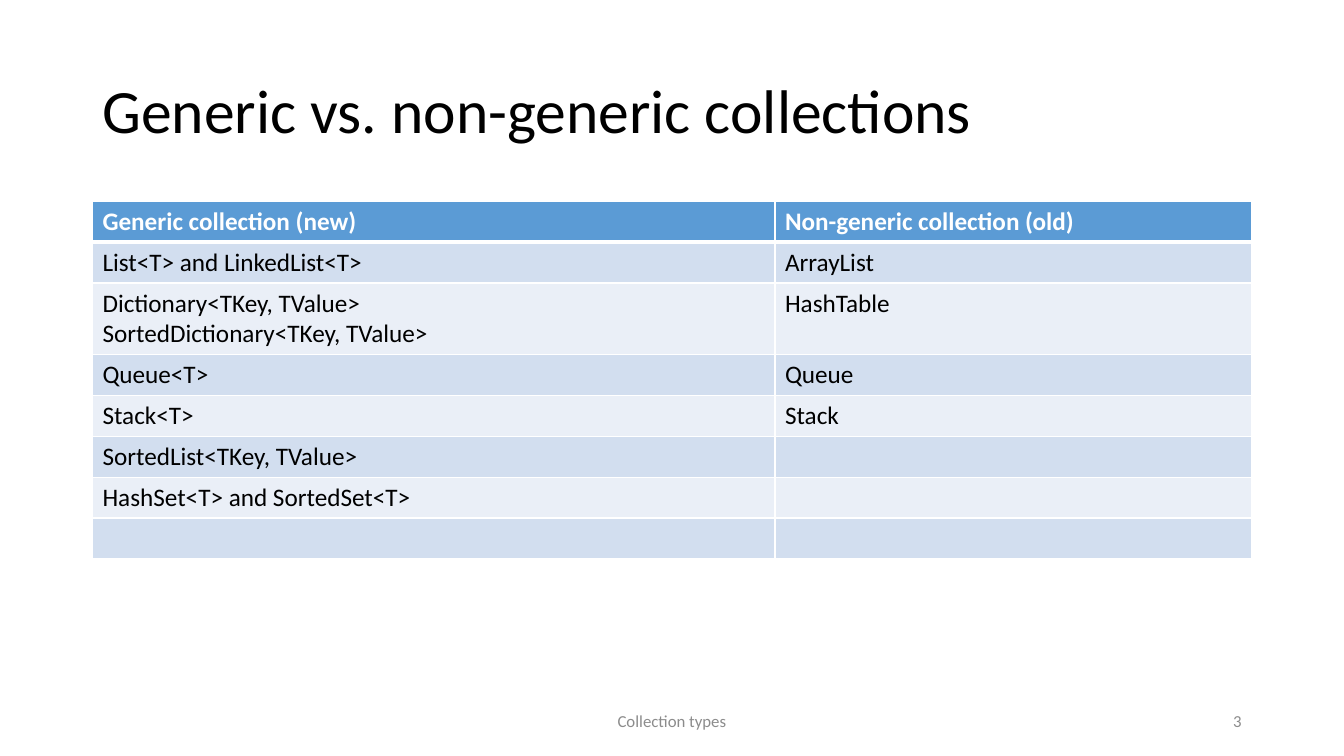
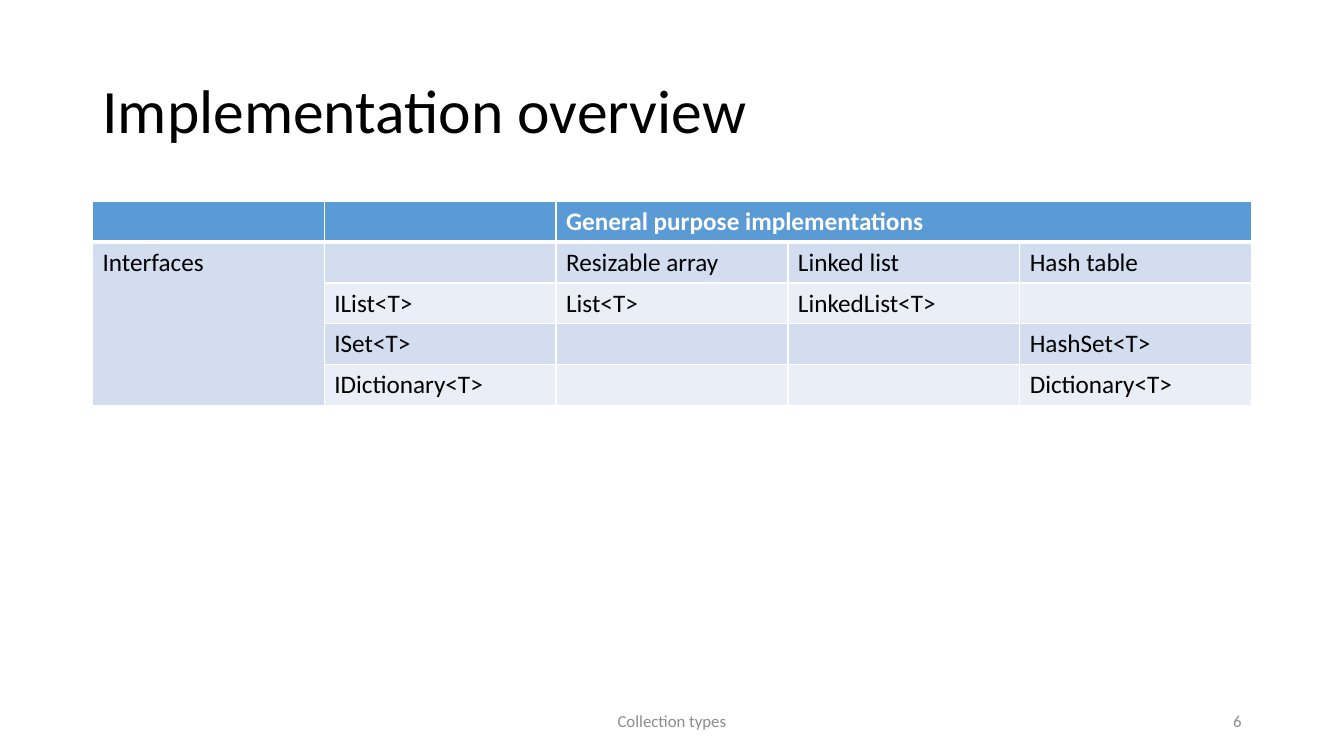
from lxml import etree
from pptx import Presentation
from pptx.dml.color import RGBColor
from pptx.enum.text import MSO_ANCHOR, MSO_AUTO_SIZE, PP_ALIGN
from pptx.oxml.ns import qn
from pptx.util import Cm, Pt

LEFT, CENTER, RIGHT = PP_ALIGN.LEFT, PP_ALIGN.CENTER, PP_ALIGN.RIGHT
MIDDLE = MSO_ANCHOR.MIDDLE
NO_AUTOFIT = MSO_AUTO_SIZE.NONE
TITLE_ONLY_LAYOUT = 5

FONT = "Calibri"
BLACK, WHITE, GRAY = "000000", "FFFFFF", "8C8C8C"
HEADER_FILL = "5B9BD5"
BAND_FILLS = ("D2DEEF", "EAEFF7")

# Lengths in centimetres
SLIDE_WIDTH, SLIDE_HEIGHT = 33.87, 19.05
CONTENT_LEFT, CONTENT_WIDTH = 2.33, 29.21
TITLE_BOX = (CONTENT_LEFT, 1.01, CONTENT_WIDTH, 3.68)
TABLE_TOP = 5.07
LINE_HEIGHT, CELL_PADDING = 0.76, 0.27
FOOTER_TOP, FOOTER_HEIGHT = 17.66, 1.01
FOOTER_WIDTH, NUMBER_WIDTH = 11.43, 7.62
FOOTER_BOX = ((SLIDE_WIDTH - FOOTER_WIDTH) / 2, FOOTER_TOP, FOOTER_WIDTH, FOOTER_HEIGHT)
NUMBER_BOX = (CONTENT_LEFT + CONTENT_WIDTH - NUMBER_WIDTH, FOOTER_TOP,
              NUMBER_WIDTH, FOOTER_HEIGHT)

GENERIC_ROWS = [
    ("Generic collection (new)", "Non-generic collection (old)"),
    ("List<T> and LinkedList<T>", "ArrayList"),
    ("Dictionary<TKey, TValue>\nSortedDictionary<TKey, TValue>", "HashTable"),
    ("Queue<T>", "Queue"),
    ("Stack<T>", "Stack"),
    ("SortedList<TKey, TValue>", ""),
    ("HashSet<T> and SortedSet<T>", ""),
    ("", ""),
]
OVERVIEW_ROWS = [
    ("", "", "General purpose implementations", "", ""),
    ("Interfaces", "", "Resizable array", "Linked list", "Hash table"),
    ("", "IList<T>", "List<T>", "LinkedList<T>", ""),
    ("", "ISet<T>", "", "", "HashSet<T>"),
    ("", "IDictionary<T>", "", "", "Dictionary<T>"),
]
OVERVIEW_MERGES = [((0, 2), (0, 4)), ((1, 0), (4, 0))]


def color(hex_string):
    return RGBColor.from_string(hex_string)


def style_text(text_frame, size, hex_string, alignment=LEFT, bold=False):
    for paragraph in text_frame.paragraphs:
        paragraph.alignment = alignment
        font = paragraph.font
        font.name, font.size, font.bold = FONT, Pt(size), bold
        font.color.rgb = color(hex_string)


def add_title(slide, text, box):
    title = slide.shapes.title
    title.left, title.top, title.width, title.height = map(Cm, box)
    text_frame = title.text_frame
    text_frame.text = text
    text_frame.auto_size = NO_AUTOFIT
    text_frame.vertical_anchor = MIDDLE
    text_frame.paragraphs[0].line_spacing = 0.9
    style_text(text_frame, 44, BLACK)


def add_footer_text(slide, text, box, alignment):
    text_frame = slide.shapes.add_textbox(*map(Cm, box)).text_frame
    text_frame.word_wrap = True
    text_frame.vertical_anchor = MIDDLE
    text_frame.text = text
    style_text(text_frame, 12, GRAY, alignment)


def set_borders(cell, top, bottom):
    """Draw white cell borders; top and bottom are widths in points."""
    properties = cell._tc.get_or_add_tcPr()
    for side, width in (("L", 1), ("R", 1), ("T", top), ("B", bottom)):
        line = etree.SubElement(properties, qn(f"a:ln{side}"), w=str(Pt(width)))
        fill = etree.SubElement(line, qn("a:solidFill"))
        etree.SubElement(fill, qn("a:srgbClr"), val=WHITE)


def style_cell(cell, row_index):
    is_header = row_index == 0
    set_borders(cell, top=3 if row_index == 1 else 1, bottom=3 if is_header else 1)
    cell.fill.solid()
    fill = HEADER_FILL if is_header else BAND_FILLS[(row_index - 1) % 2]
    cell.fill.fore_color.rgb = color(fill)
    style_text(cell.text_frame, 18, WHITE if is_header else BLACK, bold=is_header)


def add_banded_table(slide, rows, column_widths, left, top, merges=()):
    line_counts = [max(text.count("\n") + 1 for text in row) for row in rows]
    heights = [count * LINE_HEIGHT + CELL_PADDING for count in line_counts]
    table = slide.shapes.add_table(
        len(rows), len(column_widths), Cm(left), Cm(top),
        Cm(sum(column_widths)), Cm(sum(heights))).table
    for column, width in zip(table.columns, column_widths):
        column.width = Cm(width)
    for row_index, (row, height) in enumerate(zip(rows, heights)):
        table.rows[row_index].height = Cm(height)
        for column_index, text in enumerate(row):
            cell = table.cell(row_index, column_index)
            cell.text = text
            style_cell(cell, row_index)
    for first, last in merges:
        table.cell(*first).merge(table.cell(*last))


def add_table_slide(presentation, title, number, rows, column_widths, merges=()):
    slide = presentation.slides.add_slide(presentation.slide_layouts[TITLE_ONLY_LAYOUT])
    add_title(slide, title, TITLE_BOX)
    add_banded_table(slide, rows, column_widths, CONTENT_LEFT, TABLE_TOP, merges)
    add_footer_text(slide, "Collection types", FOOTER_BOX, CENTER)
    add_footer_text(slide, str(number), NUMBER_BOX, RIGHT)


def main():
    presentation = Presentation()
    presentation.slide_width = Cm(SLIDE_WIDTH)
    presentation.slide_height = Cm(SLIDE_HEIGHT)
    add_table_slide(presentation, "Generic vs. non-generic collections", 3,
                    GENERIC_ROWS, [17.2, CONTENT_WIDTH - 17.2])
    add_table_slide(presentation, "Implementation overview", 6,
                    OVERVIEW_ROWS, [CONTENT_WIDTH / 5] * 5, OVERVIEW_MERGES)
    presentation.save("out.pptx")


if __name__ == "__main__":
    main()
